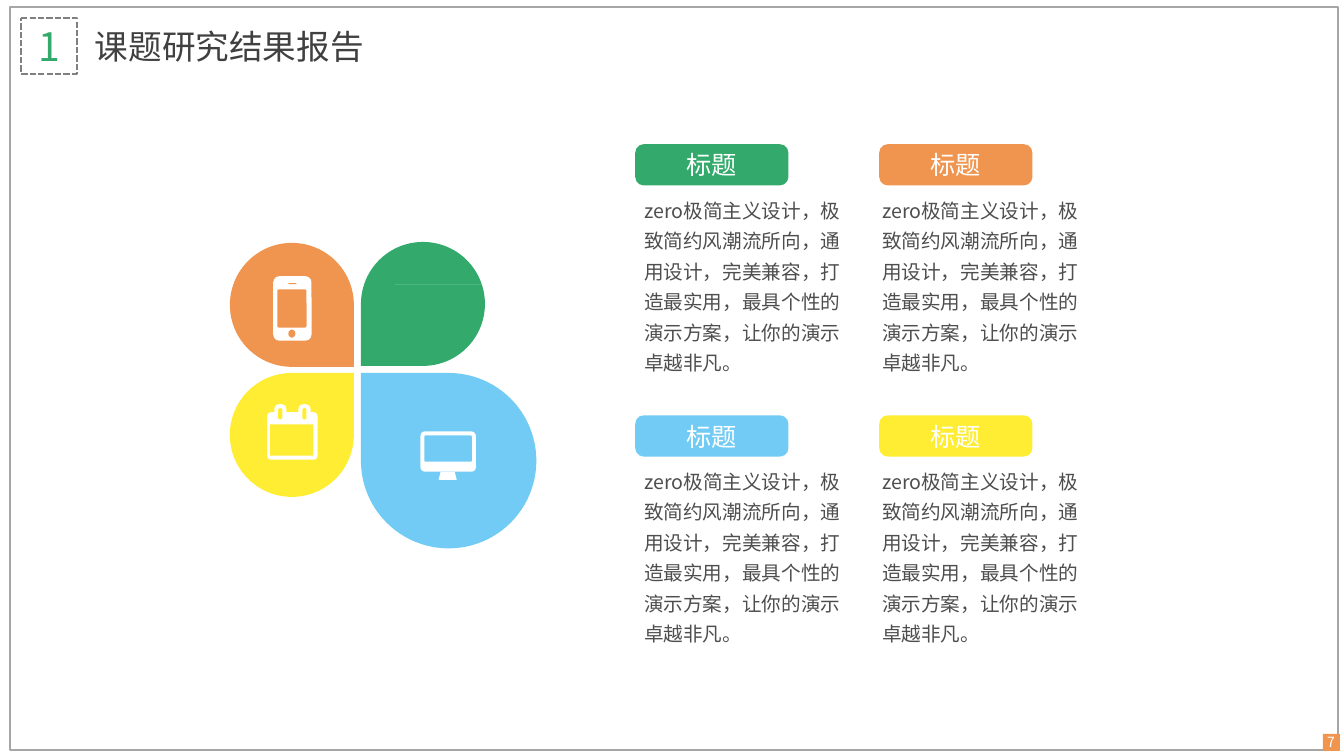
from lxml import etree
from pptx import Presentation
from pptx.dml.color import RGBColor
from pptx.enum import dml, shapes, text
from pptx.oxml.ns import qn
from pptx.util import Inches, Pt

FONT = "Noto Sans CJK SC"
COLORS = {
    "white": "FFFFFF", "green": "33AA6C", "orange": "F0954F",
    "blue": "71CBF4", "yellow": "FFED33", "frame": "A6A6A6",
    "dash": "808080", "title": "404040", "body": "4E4E4E",
}
BODY = ("zero极简主义设计，极致简约风潮流所向，通用设计，完美兼容，"
        "打造最实用，最具个性的演示方案，让你的演示卓越非凡。")
KIND = shapes.MSO_SHAPE
RECT, ROUND = KIND.RECTANGLE, KIND.ROUNDED_RECTANGLE

PHONE = [
    (ROUND, 0.43, 0.33, 0.38, 0.64, True, 0.16),
    (ROUND, 0.47, 0.46, 0.29, 0.38, False, 0.06),
    (ROUND, 0.58, 0.4, 0.08, 0.01, False, 0.5),
    (KIND.OVAL, 0.58, 0.86, 0.07, 0.08, False, None),
]
CALENDAR = [
    (ROUND, 0.37, 0.39, 0.5, 0.47, True, 0.08),
    (RECT, 0.4, 0.51, 0.43, 0.31, False, None),
] + [
    (ROUND, x + inset, 0.31 + inset, w, h, white, 0.4)
    for x in (0.44, 0.68)
    for inset, w, h, white in ((0, 0.12, 0.18, True), (0.04, 0.04, 0.11, False))
]
MONITOR = [
    (ROUND, 0.59, 0.58, 0.55, 0.4, True, 0.11),
    (ROUND, 0.63, 0.62, 0.47, 0.26, False, 0.04),
    (KIND.TRAPEZOID, 0.77, 0.98, 0.18, 0.08, True, 0.25),
]
AXES = [(0.55, 0.42), (0, 0.42), (0, 0), (0.03, 0), (0.03, 0.38), (0.55, 0.38)]
BARS = [(0.1, 0.21), (0.21, 0.07), (0.31, 0.14), (0.42, 0.04)]


def rgb(name):
    """Return the named colour."""
    return RGBColor.from_string(COLORS[name])


def add_text(tf, words, size, color, align=text.PP_ALIGN.LEFT,
             anchor=text.MSO_ANCHOR.MIDDLE, spacing=None, gap=0, inset=None):
    """Write one formatted paragraph into a text frame."""
    tf.word_wrap = True
    tf.auto_size = text.MSO_AUTO_SIZE.NONE
    tf.vertical_anchor = anchor
    if inset is not None:
        tf.margin_left = tf.margin_right = Inches(inset)
        tf.margin_top = tf.margin_bottom = Inches(inset)
    p = tf.paragraphs[0]
    p.alignment = align
    p.line_spacing = spacing
    p.space_before = p.space_after = Pt(gap)
    r = p.add_run()
    r.text = words
    r.font.name, r.font.size = FONT, Pt(size)
    r.font.color.rgb = rgb(color)
    etree.SubElement(r.font._element, qn("a:ea"), typeface=FONT)


def paint(sp, fill=None, line=None, width=1):
    """Give a shape a flat fill and an outline, or neither."""
    sp.shadow.inherit = False
    if fill:
        sp.fill.solid()
        sp.fill.fore_color.rgb = rgb(fill)
    else:
        sp.fill.background()
    if line:
        sp.line.color.rgb = rgb(line)
        sp.line.width = Pt(width)
    else:
        sp.line.fill.background()


def add_shape(s, kind, x, y, w, h, fill=None, adj=None, line=None, width=1):
    """Add a preset shape with its paint and adjustment."""
    sp = s.shapes.add_shape(kind, Inches(x), Inches(y), Inches(w), Inches(h))
    paint(sp, fill, line, width)
    if adj is not None:
        sp.adjustments[0] = adj
    return sp


def add_box(s, x, y, w, h):
    """Add a text box and return its text frame."""
    return s.shapes.add_textbox(Inches(x), Inches(y), Inches(w), Inches(h)).text_frame


def add_header(s, x, y, h):
    """Place the numbered dashed square and the slide title."""
    sp = add_shape(s, ROUND, x, y, h, h, adj=0, line="dash", width=1.5)
    sp.line.dash_style = dml.MSO_LINE.SQUARE_DOT
    add_text(sp.text_frame, "1", 28, "green", align=text.PP_ALIGN.CENTER, inset=0)
    title = s.shapes.title
    title.left, title.top = Inches(x + 0.63), Inches(y)
    title.width, title.height = Inches(3.59), Inches(h)
    add_text(title.text_frame, "课题研究结果报告", 24, "title")


def add_page_number(s, x, y, size):
    """Place the page number on its small square."""
    add_shape(s, RECT, x, y, size, size, fill="orange")
    tf = add_box(s, x - 0.14, y, 0.44, size)
    add_text(tf, "7", 10, "white", align=text.PP_ALIGN.CENTER)


def add_petal(s, x, y, size, color, rotation, icon=()):
    """Draw a teardrop petal with its icon."""
    sp = add_shape(s, KIND.TEAR, x, y, size, size, fill=color)
    sp.rotation = rotation
    for kind, dx, dy, w, h, white, adj in icon:
        add_shape(s, kind, x + dx, y + dy, w, h, "white" if white else color, adj)


def add_bar_icon(s, x, y):
    """Draw the bar chart icon as one outline of axes and bars."""
    base, w = 0.35, 0.07
    outlines = [AXES] + [
        [(left, base), (left, top), (left + w, top), (left + w, base)]
        for left, top in BARS
    ]
    fb = s.shapes.build_freeform(*outlines[0][0], scale=Inches(1))
    for i, points in enumerate(outlines):
        if i:
            fb.move_to(*points[0])
        fb.add_line_segments(points[1:], close=True)
    paint(fb.convert_to_shape(Inches(x), Inches(y)), "white")


def add_flower(s, x, y):
    """Place the four petals around their common centre."""
    add_petal(s, x + 1.3, y + 1.3, 1.74, "blue", 270, MONITOR)
    add_petal(s, x + 1.3, y, 1.23, "green", 180)
    add_bar_icon(s, x + 1.64, y + 0.42)
    add_petal(s, x, y + 1.3, 1.23, "yellow", 0, CALENDAR)
    add_petal(s, x, y + 0.01, 1.23, "orange", 90, PHONE)


def add_cards(s, x, y):
    """Place the two-by-two grid of headings and descriptions."""
    for i, color in enumerate(("green", "orange", "blue", "yellow")):
        row, col = divmod(i, 2)
        top = y + 2.69 * row
        sp = add_shape(s, ROUND, x + 2.42 * col, top, 1.52, 0.41, color, 0.21)
        add_text(sp.text_frame, "标题", 18, "white", align=text.PP_ALIGN.CENTER)
        tf = add_box(s, x - 0.01 + 2.36 * col, top + 0.42, 2.27, 1.94)
        add_text(tf, BODY, 14, "body", anchor=text.MSO_ANCHOR.TOP,
                 spacing=1.3, gap=6)


def main():
    """Build and save the slide."""
    prs = Presentation()
    prs.slide_width, prs.slide_height = Inches(13.33), Inches(7.5)
    s = prs.slides.add_slide(prs.slide_layouts[5])
    add_shape(s, RECT, 0.1, 0.07, 13.17, 7.37, line="frame")
    add_header(s, 0.21, 0.18, 0.55)
    add_page_number(s, 13.12, 7.28, 0.17)
    add_flower(s, 2.28, 2.4)
    add_cards(s, 6.3, 1.43)
    prs.save("out.pptx")


if __name__ == "__main__":
    main()
